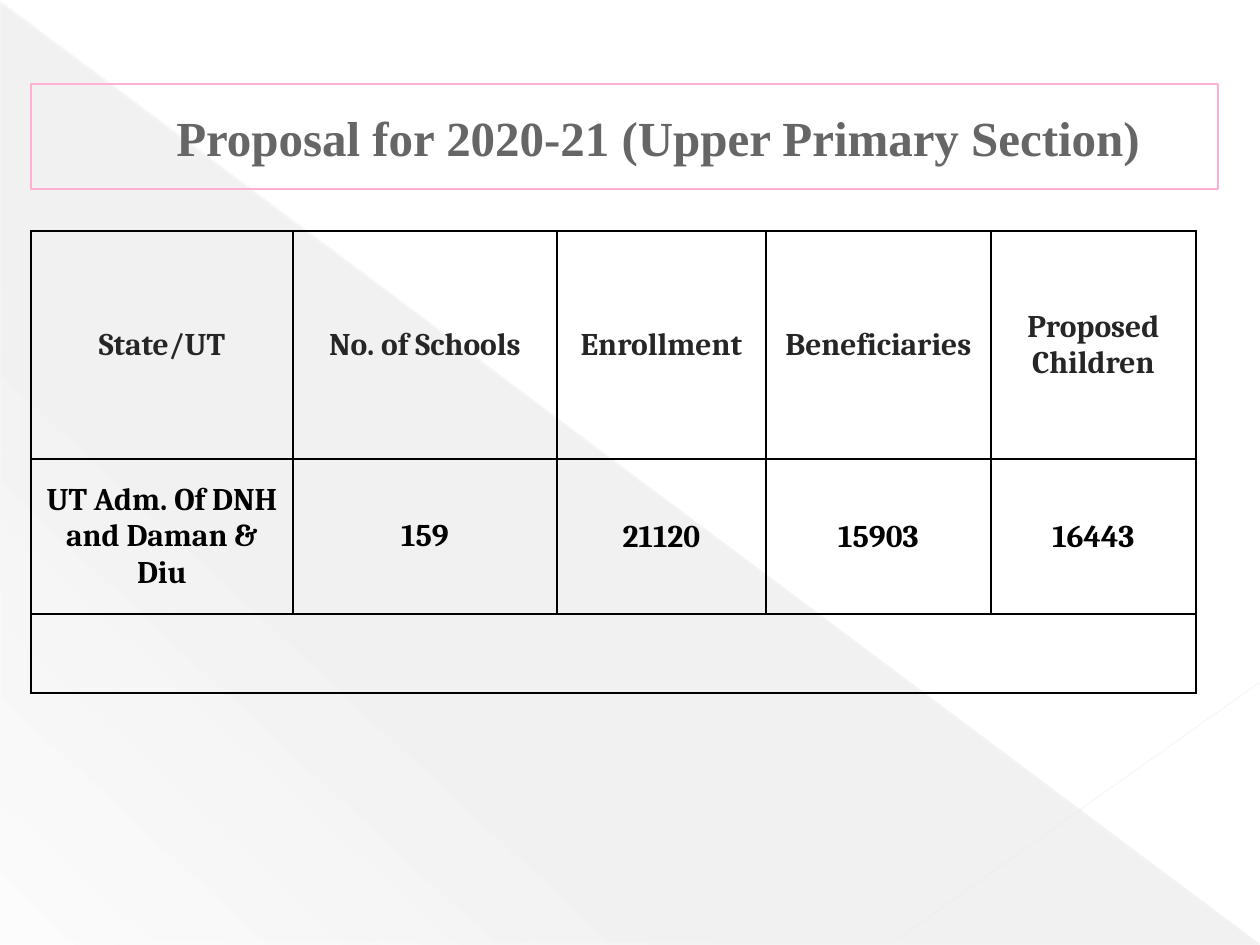
"""Build the Upper Primary proposal slide with its enrolment table."""
from lxml import etree
from pptx import Presentation
from pptx.dml.color import RGBColor
from pptx.enum.shapes import MSO_CONNECTOR, MSO_SHAPE
from pptx.enum.text import MSO_ANCHOR, PP_ALIGN
from pptx.oxml import parse_xml
from pptx.oxml.ns import nsdecls, qn
from pptx.util import Pt

TRIANGLE = MSO_SHAPE.RIGHT_TRIANGLE
STRAIGHT = MSO_CONNECTOR.STRAIGHT
MIDDLE = MSO_ANCHOR.MIDDLE
CENTER = PP_ALIGN.CENTER

GREY = RGBColor(0x66, 0x66, 0x66)
PINK = RGBColor(0xFF, 0xAF, 0xD1)
DARK = RGBColor(0x26, 0x26, 0x26)
BLACK = RGBColor(0, 0, 0)
DIAGONAL_GREY = RGBColor(0xE8, 0xE8, 0xE8)
CORNER_GREY = RGBColor(0xEA, 0xEA, 0xEA)

TITLE = "Proposal for 2020-21 (Upper Primary Section)"
HEADINGS = ["State/UT", "No. of Schools", "Enrollment", "Beneficiaries", "Proposed\nChildren"]
FIGURES = ["UT Adm. Of DNH and Daman & Diu", "159", "21120", "15903", "16443"]
TABLE_ROWS = [(HEADINGS, DARK), (FIGURES, BLACK)]
COLUMN_WIDTHS = [262, 264, 209, 225, 205]
ROW_HEIGHTS = [228, 155, 79]
TIGHT_CELLS = [(1, 2), (1, 3), (1, 4)]

TRIANGLE_BOX = (1, 3, 1258, 942)
TRIANGLE_STOPS = [(0, 10), (70, 8), (100, 1)]
TRIANGLE_ANGLE = 133
BACKGROUND_LINES = [
    ((0, 1, 1259, 944), DIAGONAL_GREY, 0.39, 35),
    ((1260, 682, 891, 944), CORNER_GREY, 0.47, 45),
]
TITLE_BOX = (31, 84, 1187, 105)
TITLE_INDENT = 67
TABLE_ORIGIN = (31, 231)


def px(length):
    return round(length * 914400 / 126)


def add_triangle(slide):
    triangle = slide.shapes.add_shape(TRIANGLE, *map(px, TRIANGLE_BOX))
    triangle.shadow.inherit = False
    triangle.line.fill.background()
    triangle.fill.background()
    stops = "".join(
        f'<a:gs pos="{position * 1000}"><a:srgbClr val="{GREY}">'
        f'<a:alpha val="{opacity * 1000}"/></a:srgbClr></a:gs>'
        for position, opacity in TRIANGLE_STOPS
    )
    gradient = parse_xml(
        f'<a:gradFill {nsdecls("a")}><a:gsLst>{stops}</a:gsLst>'
        f'<a:lin ang="{TRIANGLE_ANGLE * 60000}" scaled="0"/></a:gradFill>'
    )
    properties = triangle._element.spPr
    properties.replace(properties.find(qn("a:noFill")), gradient)


def add_background_line(slide, ends, color, width, opacity):
    connector = slide.shapes.add_connector(STRAIGHT, *map(px, ends))
    connector.line.color.rgb = color
    connector.line.width = Pt(width)
    properties = connector._element.spPr
    shade = properties.find(".//" + qn("a:srgbClr"))
    etree.SubElement(shade, qn("a:alpha")).set("val", str(opacity * 1000))
    etree.SubElement(properties, qn("a:effectLst"))


def format_paragraphs(frame, font_name, size, color):
    for paragraph in frame.paragraphs:
        paragraph.alignment = CENTER
        paragraph.font.name = font_name
        paragraph.font.size = Pt(size)
        paragraph.font.bold = True
        paragraph.font.color.rgb = color


def place_title(slide):
    title = slide.shapes.title
    title.left, title.top, title.width, title.height = map(px, TITLE_BOX)
    title.line.color.rgb = PINK
    title.line.width = Pt(0.75)
    frame = title.text_frame
    frame.text = TITLE
    frame.vertical_anchor = MIDDLE
    format_paragraphs(frame, "Times New Roman", 28, GREY)
    frame.paragraphs[0]._p.get_or_add_pPr().set("marL", str(px(TITLE_INDENT)))
    slide.shapes._spTree.append(title._element)


def add_borders(cell):
    properties = cell._tc.get_or_add_tcPr()
    for index, side in enumerate("LRTB"):
        properties.insert(index, parse_xml(
            f'<a:ln{side} {nsdecls("a")} w="{Pt(1)}"><a:solidFill>'
            f'<a:srgbClr val="{BLACK}"/></a:solidFill></a:ln{side}>'
        ))


def add_proposal_table(slide):
    size = (sum(COLUMN_WIDTHS), sum(ROW_HEIGHTS))
    table = slide.shapes.add_table(
        len(ROW_HEIGHTS), len(COLUMN_WIDTHS), *map(px, TABLE_ORIGIN + size)
    ).table
    table.first_row = table.horz_banding = False
    for column, width in zip(table.columns, COLUMN_WIDTHS):
        column.width = px(width)
    for row, height in zip(table.rows, ROW_HEIGHTS):
        row.height = px(height)
    for cell in table.iter_cells():
        cell.fill.background()
        cell.vertical_anchor = MIDDLE
        add_borders(cell)
    for row, (texts, color) in enumerate(TABLE_ROWS):
        for column, text in enumerate(texts):
            cell = table.cell(row, column)
            cell.text = text
            format_paragraphs(cell.text_frame, "Cambria", 18, color)
    for row, column in TIGHT_CELLS:
        cell = table.cell(row, column)
        cell.margin_left = cell.margin_right = cell.margin_top = px(1)
        cell.margin_bottom = 0
    last_row = len(ROW_HEIGHTS) - 1
    table.cell(last_row, 0).merge(table.cell(last_row, len(COLUMN_WIDTHS) - 1))


def main():
    presentation = Presentation()
    presentation.slide_width, presentation.slide_height = px(1260), px(945)
    slide = presentation.slides.add_slide(presentation.slide_layouts[5])
    add_triangle(slide)
    for background_line in BACKGROUND_LINES:
        add_background_line(slide, *background_line)
    place_title(slide)
    add_proposal_table(slide)
    presentation.save("out.pptx")


if __name__ == "__main__":
    main()
